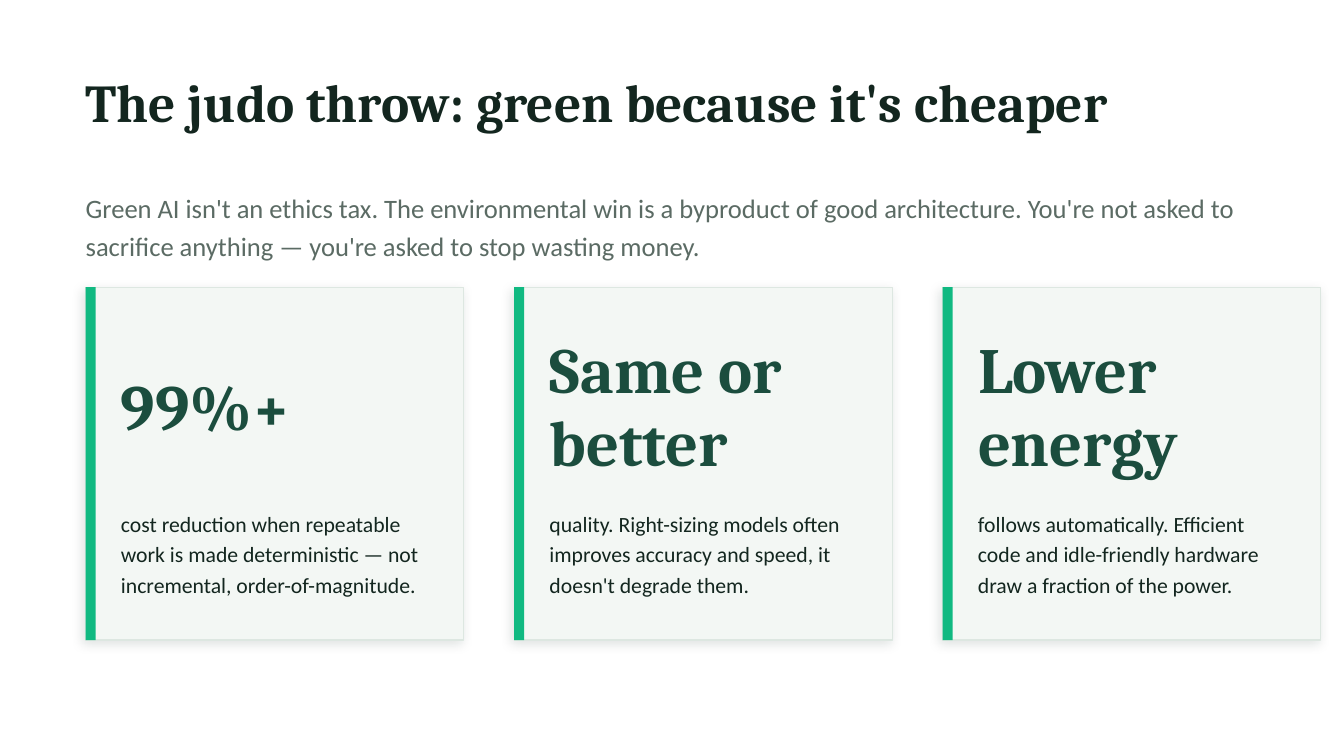
"""Build the slide that argues green AI wins because it is cheaper."""
from lxml.etree import SubElement
from pptx import Presentation
from pptx.dml.color import RGBColor
from pptx.enum.shapes import MSO_SHAPE
from pptx.enum.text import MSO_ANCHOR, MSO_AUTO_SIZE, PP_ALIGN
from pptx.oxml.ns import qn
from pptx.util import Inches, Pt

TITLE = "The judo throw: green because it's cheaper"
INTRO = ("Green AI isn't an ethics tax. The environmental win is a byproduct of good "
         "architecture. You're not asked to sacrifice anything — you're asked to stop "
         "wasting money.")
CARDS = [
    (["99%+"], "cost reduction when repeatable work is made deterministic — not "
               "incremental, order-of-magnitude."),
    (["Same or", "better"], "quality. Right-sizing models often improves accuracy and "
                            "speed, it doesn't degrade them."),
    (["Lower", "energy"], "follows automatically. Efficient code and idle-friendly "
                          "hardware draw a fraction of the power."),
]

COLORS = {"ink": "13261F", "muted": "5B6B64", "forest": "1B4D3E", "accent": "10B981",
          "card": "F3F7F4", "border": "DDE7E1", "shadow": "0F2A22"}
STYLES = {
    "title": ({"name": "Cambria", "size": Pt(38), "bold": True}, "ink", 1.0),
    "intro": ({"name": "Calibri", "size": Pt(19), "bold": False}, "muted", 1.2),
    "figure": ({"name": "Cambria", "size": Pt(46), "bold": True}, "forest", 0.95),
    "detail": ({"name": "Calibri", "size": Pt(15.5), "bold": False}, "ink", 1.18),
}

SLIDE_WIDTH, SLIDE_HEIGHT = 13.33, 7.5
MARGIN = 0.85
CARD_TOP, CARD_WIDTH, CARD_HEIGHT, CARD_GAP = 2.85, 3.75, 3.5, 0.5
BAR_WIDTH, INSET = 0.1, 0.35
FIGURE_TOP, FIGURE_HEIGHT = CARD_TOP + 0.45, 1.5
DETAIL_TOP, DETAIL_HEIGHT = FIGURE_TOP + FIGURE_HEIGHT, 1.35


def color(name):
    return RGBColor.from_string(COLORS[name])


def place(shape, left, top, width, height):
    bounds = {"left": left, "top": top, "width": width, "height": height}
    for key, value in bounds.items():
        setattr(shape, key, Inches(value))


def write(box, lines, style):
    font_values, font_color, spacing = STYLES[style]
    frame = box.text_frame
    frame_values = {"word_wrap": True, "auto_size": MSO_AUTO_SIZE.NONE,
                    "vertical_anchor": MSO_ANCHOR.MIDDLE, "margin_left": 0,
                    "margin_right": 0, "margin_top": 0, "margin_bottom": 0}
    for key, value in frame_values.items():
        setattr(frame, key, value)
    for index, line in enumerate(lines):
        para = frame.add_paragraph() if index else frame.paragraphs[0]
        para.alignment = PP_ALIGN.LEFT
        para.line_spacing = spacing
        span = para.add_run()
        span.text = line
        for key, value in font_values.items():
            setattr(span.font, key, value)
        span.font.color.rgb = color(font_color)


def add_text(page, bounds, lines, style):
    box = page.shapes.add_textbox(*map(Inches, bounds))
    write(box, lines, style)


def add_panel(page, bounds, fill):
    panel = page.shapes.add_shape(MSO_SHAPE.RECTANGLE, *map(Inches, bounds))
    panel.shadow.inherit = False
    panel.fill.solid()
    panel.fill.fore_color.rgb = color(fill)
    panel.line.fill.background()
    return panel


def add_soft_shadow(shape):
    effects = shape._element.spPr.find(qn("a:effectLst"))
    shadow = SubElement(effects, qn("a:outerShdw"), blurRad=str(Pt(8)), dist=str(Pt(3)),
                        dir=str(135 * 60000), algn="bl", rotWithShape="0")
    tint = SubElement(shadow, qn("a:srgbClr"), val=COLORS["shadow"])
    SubElement(tint, qn("a:alpha"), val="12000")


def add_card(page, left, figure, detail):
    card = add_panel(page, (left, CARD_TOP, CARD_WIDTH, CARD_HEIGHT), "card")
    card.line.color.rgb = color("border")
    card.line.width = Pt(1)
    add_soft_shadow(card)
    add_panel(page, (left, CARD_TOP, BAR_WIDTH, CARD_HEIGHT), "accent")
    text_left = left + INSET
    add_text(page, (text_left, FIGURE_TOP, 3.15, FIGURE_HEIGHT), figure, "figure")
    add_text(page, (text_left, DETAIL_TOP, 3.1, DETAIL_HEIGHT), [detail], "detail")


def main():
    deck = Presentation()
    deck.slide_width, deck.slide_height = Inches(SLIDE_WIDTH), Inches(SLIDE_HEIGHT)
    page = deck.slides.add_slide(deck.slide_layouts.get_by_name("Title Only"))
    title = page.shapes.title
    place(title, MARGIN, 0.6, 11.6, 0.8)
    write(title, [TITLE], "title")
    add_text(page, (MARGIN, 1.72, 11.5, 1), [INTRO], "intro")
    for column, (figure, detail) in enumerate(CARDS):
        add_card(page, MARGIN + column * (CARD_WIDTH + CARD_GAP), figure, detail)
    deck.save("out.pptx")


if __name__ == "__main__":
    main()
